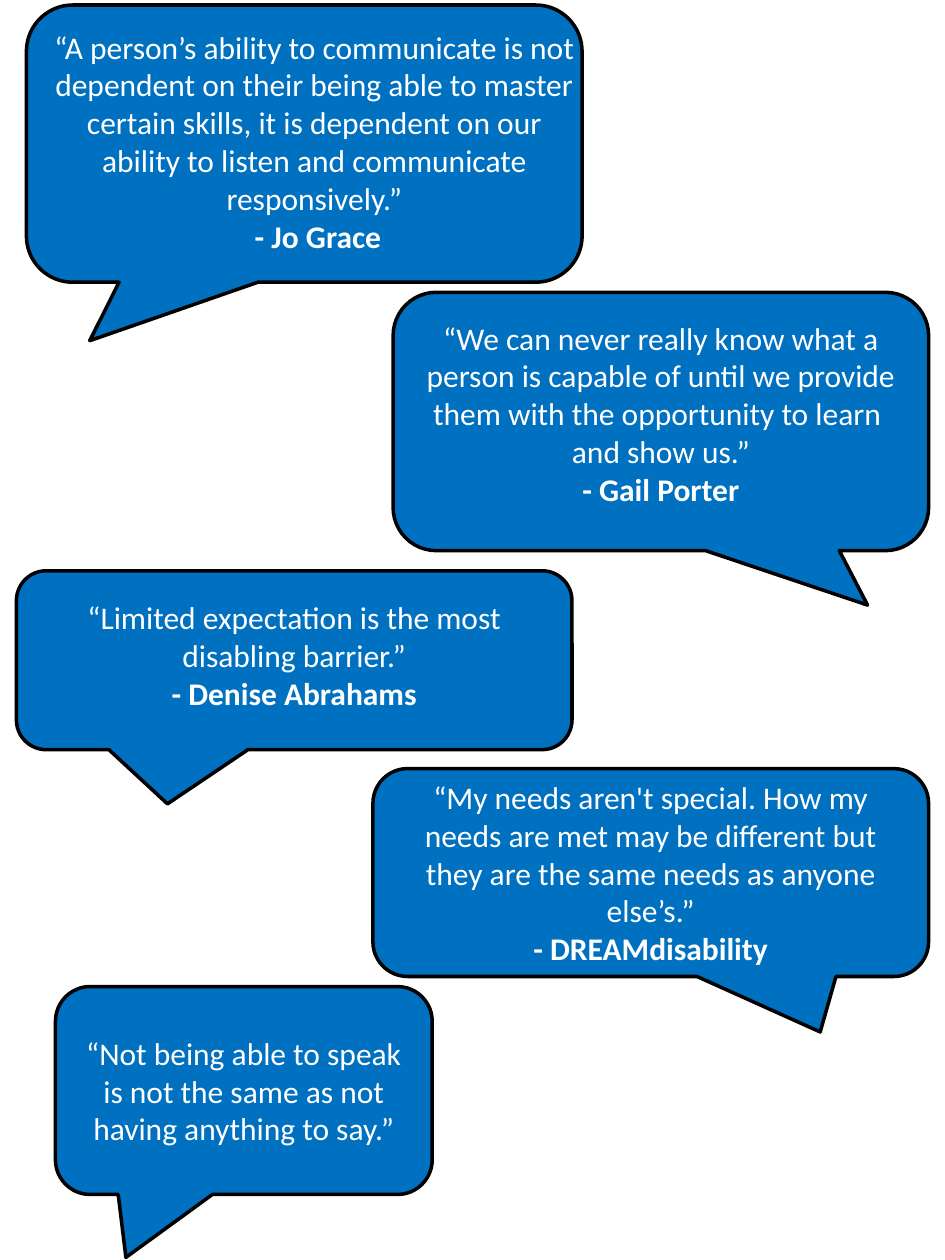
from pptx import Presentation
from pptx.dml.color import RGBColor
from pptx.enum.shapes import MSO_SHAPE
from pptx.enum.text import MSO_ANCHOR, PP_ALIGN
from pptx.util import Inches, Pt

CALLOUT = MSO_SHAPE.ROUNDED_RECTANGULAR_CALLOUT
MIDDLE, TOP = MSO_ANCHOR.MIDDLE, MSO_ANCHOR.TOP
CENTER = PP_ALIGN.CENTER

COLORS = {"bubble": "0070C0", "outline": "000000", "text": "FFFFFF"}
CORNER = 0.167

QUOTES = [
    {"lines": ["“A person’s ability to communicate is not dependent on their being able "
               "to master certain skills, it is dependent on our ability to listen and "
               "communicate responsively.”"],
     "author": " - Jo Grace",
     "bubble": (0.21, 0.04, 4.41, 2.2), "tail": (-0.386, 0.711),
     "caption": (0.29, 0.17, 4.41, 1.92)},
    {"lines": ["“We can never really know what a person is capable of until we provide "
               "them with the opportunity to learn ",
               "and show us.”"],
     "author": "- Gail Porter",
     "bubble": (3.12, 2.32, 4.25, 2.05), "tail": (0.386, 0.711),
     "caption": (3.12, 2.48, 4.25, 1.62)},
    {"lines": ["“Limited expectation is the most disabling barrier.”"],
     "author": "- Denise Abrahams",
     "bubble": (0.13, 4.53, 4.41, 1.42), "tail": (-0.228, 0.803),
     "caption": (0.13, 4.7, 4.41, 1.01)},
    {"lines": ["“My needs aren't special. How my needs are met may be different but "
               "they are the same needs as anyone else’s.”"],
     "author": "- DREAMdisability",
     "bubble": (2.96, 6.1, 4.41, 1.65), "tail": (0.305, 0.767)},
    {"lines": ["“Not being able to speak is not the same as not having anything to say.”"],
     "bubble": (0.44, 7.83, 2.99, 1.65), "tail": (-0.313, 0.803)},
]


def color(name):
    return RGBColor.from_string(COLORS[name])


def add_bubble(slide, box, tail):
    bubble = slide.shapes.add_shape(CALLOUT, *map(Inches, box))
    for index, value in enumerate((*tail, CORNER)):
        bubble.adjustments[index] = value
    bubble.shadow.inherit = False
    bubble.fill.solid()
    bubble.fill.fore_color.rgb = color("bubble")
    bubble.line.color.rgb = color("outline")
    bubble.line.width = Pt(2)
    return bubble


def write_quote(frame, lines, author, anchor):
    frame.word_wrap = True
    frame.vertical_anchor = anchor
    paragraph = frame.paragraphs[0]
    paragraph.alignment = CENTER
    paragraph.font.name = "Calibri"
    paragraph.font.size = Pt(18)
    paragraph.font.color.rgb = color("text")
    parts = [(line, False) for line in lines]
    if author:
        parts.append((author, True))
    for index, (words, bold) in enumerate(parts):
        if index:
            paragraph.add_line_break()
        run = paragraph.add_run()
        run.text = words
        run.font.name = "Calibri"
        run.font.size = Pt(18)
        run.font.color.rgb = color("text")
        run.font.bold = bold


def main():
    deck = Presentation()
    deck.slide_width, deck.slide_height = Inches(7.5), Inches(10)
    slide = deck.slides.add_slide(deck.slide_layouts[6])
    for quote in QUOTES:
        holder, anchor = add_bubble(slide, quote["bubble"], quote["tail"]), MIDDLE
        if "caption" in quote:
            holder = slide.shapes.add_textbox(*map(Inches, quote["caption"]))
            anchor = TOP
        write_quote(holder.text_frame, quote["lines"], quote.get("author"), anchor)
    deck.save("out.pptx")


if __name__ == "__main__":
    main()
